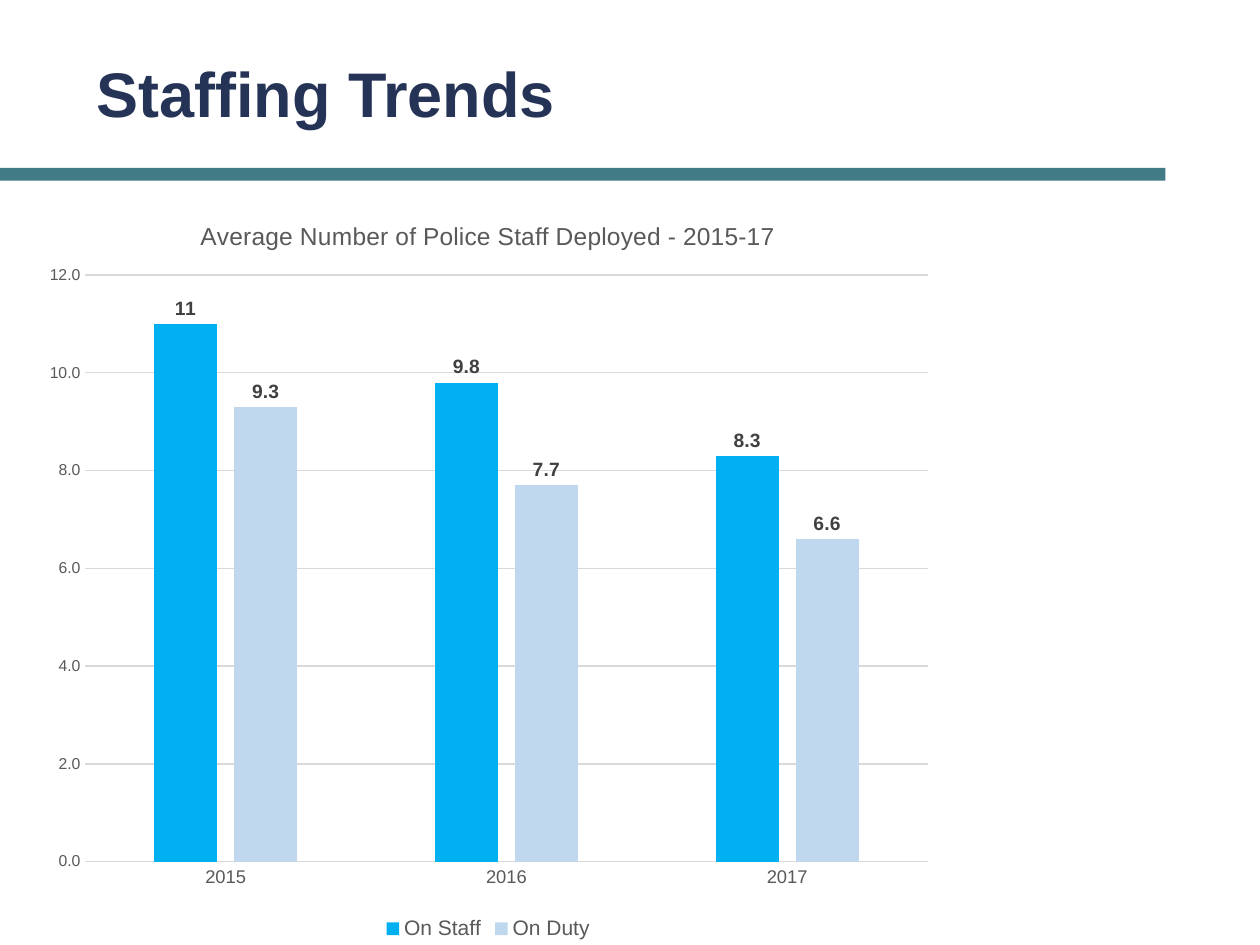
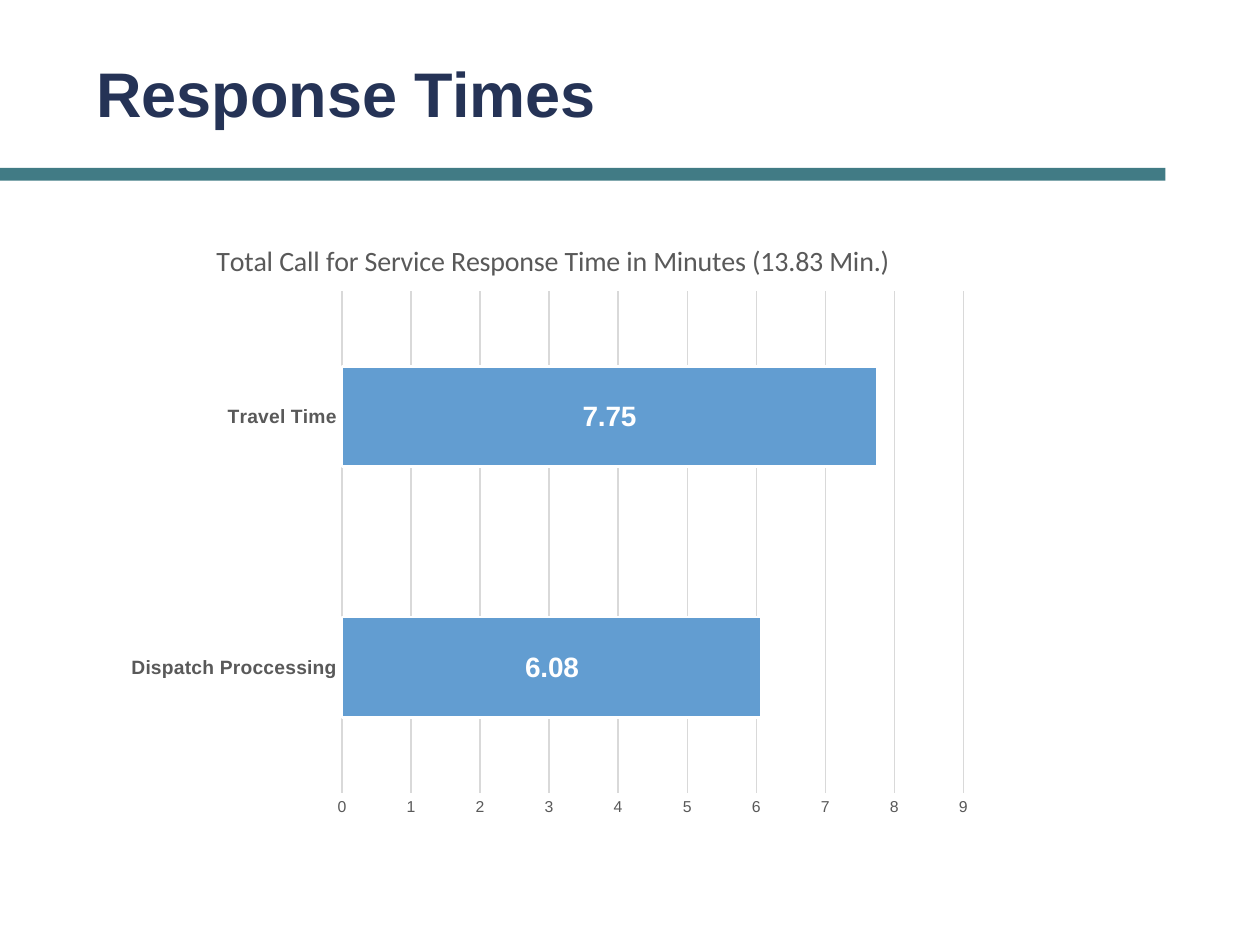
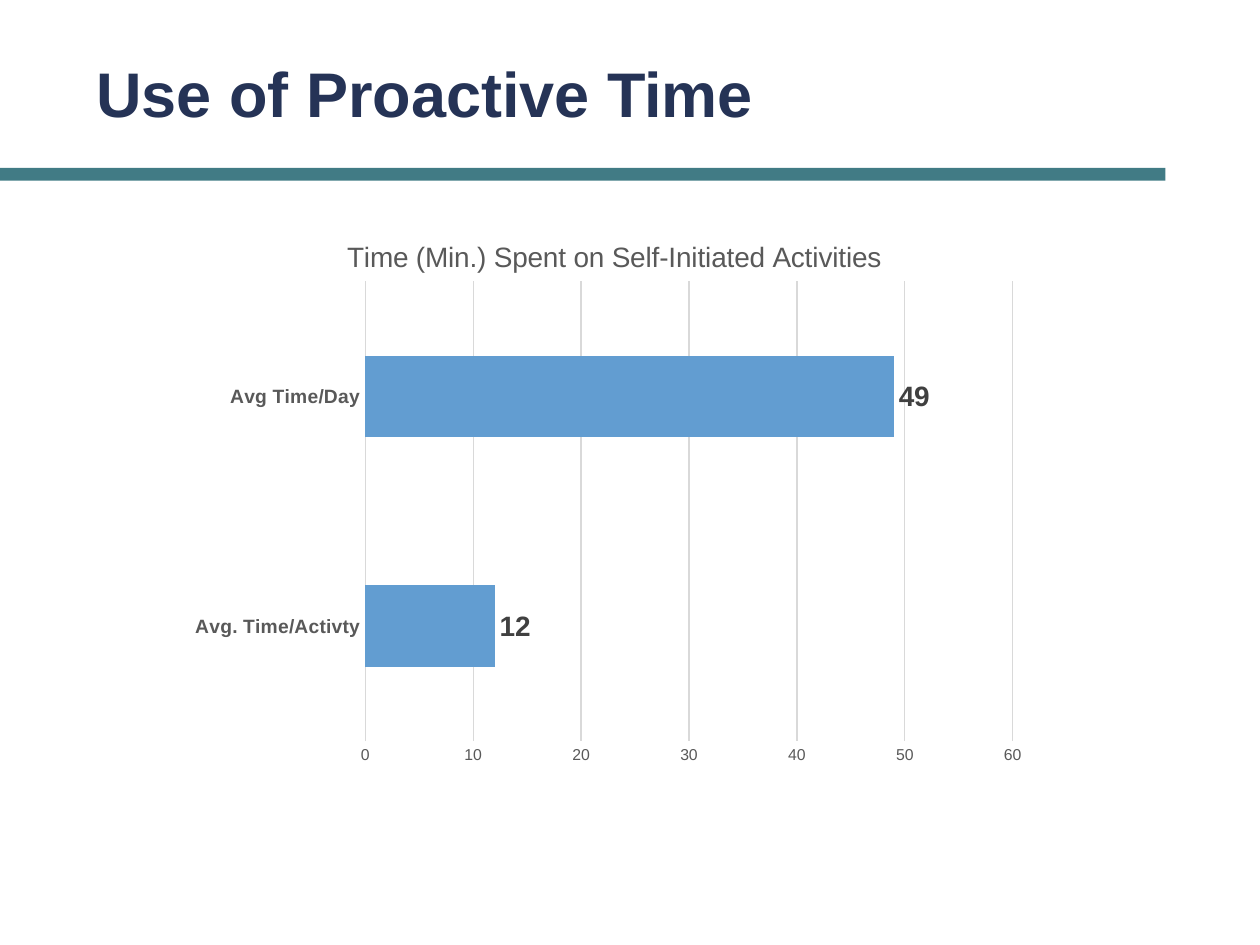
from dataclasses import dataclass

from pptx import Presentation
from pptx.chart.data import CategoryChartData
from pptx.dml.color import RGBColor
from pptx.enum.chart import (XL_CHART_TYPE, XL_LABEL_POSITION,
                             XL_LEGEND_POSITION, XL_TICK_MARK)
from pptx.enum.shapes import MSO_SHAPE
from pptx.enum.text import MSO_ANCHOR
from pptx.oxml import parse_xml
from pptx.oxml.ns import nsdecls, qn
from pptx.util import Inches, Pt


@dataclass(frozen=True)
class Theme:
    # Colours
    navy: str = "253356"
    teal: str = "417B85"
    white: str = "FFFFFF"
    black: str = "000000"
    grey: str = "595959"
    dark: str = "404040"
    rule: str = "D9D9D9"
    cyan: str = "00B0F0"
    pale: str = "C0D8ED"
    blue: str = "629DD1"
    # Fonts and type sizes
    font: str = "Arial"
    alt_font: str = "Calibri"
    heading: float = 36
    chart_title: float = 16
    column_title: float = 14
    legend: float = 12
    category: float = 11
    column_category: float = 10.5
    column_label: float = 11
    bar_label: float = 16
    base: float = 10
    scale: float = 9
    hairline: float = 0.75
    bar_edge: float = 1.5


THEME = Theme()


class Deck:
    """Slides on a grid of 120 columns by 90 rows."""

    COLUMNS, ROWS = 120, 90

    def __init__(self, theme):
        self.theme = theme
        self.prs = Presentation()
        self.prs.slide_width, self.prs.slide_height = Inches(10), Inches(7.5)
        self.slide = None

    def area(self, column, row, columns, rows):
        across = self.prs.slide_width / self.COLUMNS
        down = self.prs.slide_height / self.ROWS
        return (round(column * across), round(row * down),
                round(columns * across), round(rows * down))

    def style(self, font, size, color, bold=False, name=None):
        font.name = name or self.theme.font
        font.size = Pt(size)
        font.bold = bold
        font.color.rgb = RGBColor.from_string(color)

    def paint(self, fill, color):
        fill.solid()
        fill.fore_color.rgb = RGBColor.from_string(color)

    def stroke(self, line, color, width):
        self.paint(line.fill, color)
        line.width = Pt(width)

    def page(self, heading):
        self.slide = self.prs.slides.add_slide(self.prs.slide_layouts[6])
        self.band(0, 16, 111, 1.2)
        self.heading(heading, 8, 4, 103, 9)

    def band(self, *cells):
        band = self.slide.shapes.add_shape(MSO_SHAPE.RECTANGLE, *self.area(*cells))
        band.shadow.inherit = False
        self.paint(band.fill, self.theme.teal)
        band.line.fill.background()

    def heading(self, text, *cells):
        frame = self.slide.shapes.add_textbox(*self.area(*cells)).text_frame
        frame.word_wrap = True
        frame.vertical_anchor = MSO_ANCHOR.BOTTOM
        frame.text = text
        run = frame.paragraphs[0].runs[0]
        self.style(run.font, self.theme.heading, self.theme.navy, bold=True)

    def place(self, parent, index, **shares):
        """Fix a chart part at shares of the chart's size."""
        for old in parent.findall(qn("c:layout")):
            parent.remove(old)
        modes = {"xMode": "edge", "yMode": "edge"}
        if "w" in shares:
            modes = {"layoutTarget": "inner", **modes}
        entries = "".join(f'<c:{key} val="{value}"/>'
                          for key, value in {**modes, **shares}.items())
        parent.insert(index, parse_xml(
            f'<c:layout {nsdecls("c")}><c:manualLayout>{entries}'
            '</c:manualLayout></c:layout>'))

    def chart(self, cells, kind, categories, series, gap, overlap=0):
        data = CategoryChartData()
        data.categories = categories
        for name, values in series.items():
            data.add_series(name, values)
        chart = self.slide.shapes.add_chart(kind, *self.area(*cells), data).chart
        self.style(chart.font, self.theme.base, self.theme.black)
        chart.element.find(qn("c:chart")).addnext(parse_xml(
            f'<c:spPr {nsdecls("c", "a")}><a:solidFill><a:srgbClr '
            f'val="{self.theme.white}"/></a:solidFill><a:ln><a:noFill/></a:ln></c:spPr>'))
        chart.has_legend = False
        plot = chart.plots[0]
        plot.vary_by_categories = False
        plot.gap_width, plot.overlap = gap, overlap
        return chart

    def chart_title(self, chart, text, size, x, y, name=None):
        frame = chart.chart_title.text_frame
        frame.text = text
        self.style(frame.paragraphs[0].runs[0].font, size, self.theme.grey, name=name)
        self.place(chart.chart_title._element, 1, x=x, y=y)

    def plot_area(self, chart, x, y, w, h):
        area = chart.element.find(qn("c:chart")).find(qn("c:plotArea"))
        self.place(area, 0, x=x, y=y, w=w, h=h)

    def axes(self, chart, top, step, number_format, size, bold):
        theme = self.theme
        names, scale = chart.category_axis, chart.value_axis
        for axis in (names, scale):
            axis.major_tick_mark = axis.minor_tick_mark = XL_TICK_MARK.NONE
        self.style(names.tick_labels.font, size, theme.grey, bold)
        self.stroke(names.format.line, theme.rule, theme.hairline)
        names.has_major_gridlines = False
        self.style(scale.tick_labels.font, theme.scale, theme.grey)
        scale.tick_labels.number_format = number_format
        scale.tick_labels.number_format_is_linked = False
        scale.minimum_scale, scale.maximum_scale, scale.major_unit = 0, top, step
        scale.format.line.fill.background()
        scale.has_major_gridlines = True
        self.stroke(scale.major_gridlines.format.line, theme.rule, theme.hairline)

    def bars(self, chart, colors, size, label_color, position):
        for series, color in zip(chart.plots[0].series, colors):
            series.invert_if_negative = False
            self.paint(series.format.fill, color)
            labels = series.data_labels
            labels.show_value = True
            labels.position = position
            self.style(labels.font, size, label_color, bold=True)

    def legend(self, chart):
        chart.has_legend = True
        chart.legend.position = XL_LEGEND_POSITION.BOTTOM
        chart.legend.include_in_layout = False
        self.style(chart.legend.font, self.theme.legend, self.theme.grey)


def staffing_trends(deck):
    deck.page("Staffing Trends")
    staffing = deck.chart(
        (3, 18, 87, 72), XL_CHART_TYPE.COLUMN_CLUSTERED, ["2015", "2016", "2017"],
        {"On Staff": (11, 9.8, 8.3), "On Duty": (9.3, 7.7, 6.6)}, 219, -27)
    deck.chart_title(staffing, "Average Number of Police Staff Deployed - 2015-17",
                     THEME.column_title, 0.18, 0.035)
    deck.plot_area(staffing, 0.059, 0.114, 0.922, 0.776)
    deck.axes(staffing, 12, 2, "0.0", THEME.column_category, bold=False)
    deck.bars(staffing, (THEME.cyan, THEME.pale), THEME.column_label, THEME.dark,
              XL_LABEL_POSITION.OUTSIDE_END)
    deck.legend(staffing)


def response_times(deck):
    deck.page("Response Times")
    response = deck.chart(
        (11, 20, 83, 59), XL_CHART_TYPE.BAR_CLUSTERED,
        ["Dispatch Proccessing", "Travel Time"], {"Series 1": (6.08, 7.75)}, 150)
    deck.chart_title(response, "Total Call for Service Response Time in Minutes (13.83 Min.)",
                     THEME.chart_title, 0.11, 0.043, THEME.alt_font)
    deck.plot_area(response, 0.26, 0.131, 0.713, 0.81)
    deck.axes(response, 9, 1, "General", THEME.category, bold=True)
    deck.bars(response, (THEME.blue,), THEME.bar_label, THEME.white,
              XL_LABEL_POSITION.CENTER)
    deck.stroke(response.plots[0].series[0].format.line, THEME.white, THEME.bar_edge)


def proactive_time(deck):
    deck.page("Use of Proactive Time")
    activity = deck.chart(
        (17, 20, 82, 54), XL_CHART_TYPE.BAR_CLUSTERED,
        ["Avg. Time/Activty", "Avg Time/Day"], {"Series 1": (12, 49)}, 182)
    deck.chart_title(activity, "Time (Min.) Spent on Self-Initiated Activities",
                     THEME.chart_title, 0.19, 0.042)
    deck.plot_area(activity, 0.217, 0.126, 0.752, 0.811)
    deck.axes(activity, 60, 10, "0", THEME.category, bold=True)
    deck.bars(activity, (THEME.blue,), THEME.bar_label, THEME.dark,
              XL_LABEL_POSITION.OUTSIDE_END)


def main():
    deck = Deck(THEME)
    for build in (staffing_trends, response_times, proactive_time):
        build(deck)
    deck.prs.save("out.pptx")


if __name__ == "__main__":
    main()
